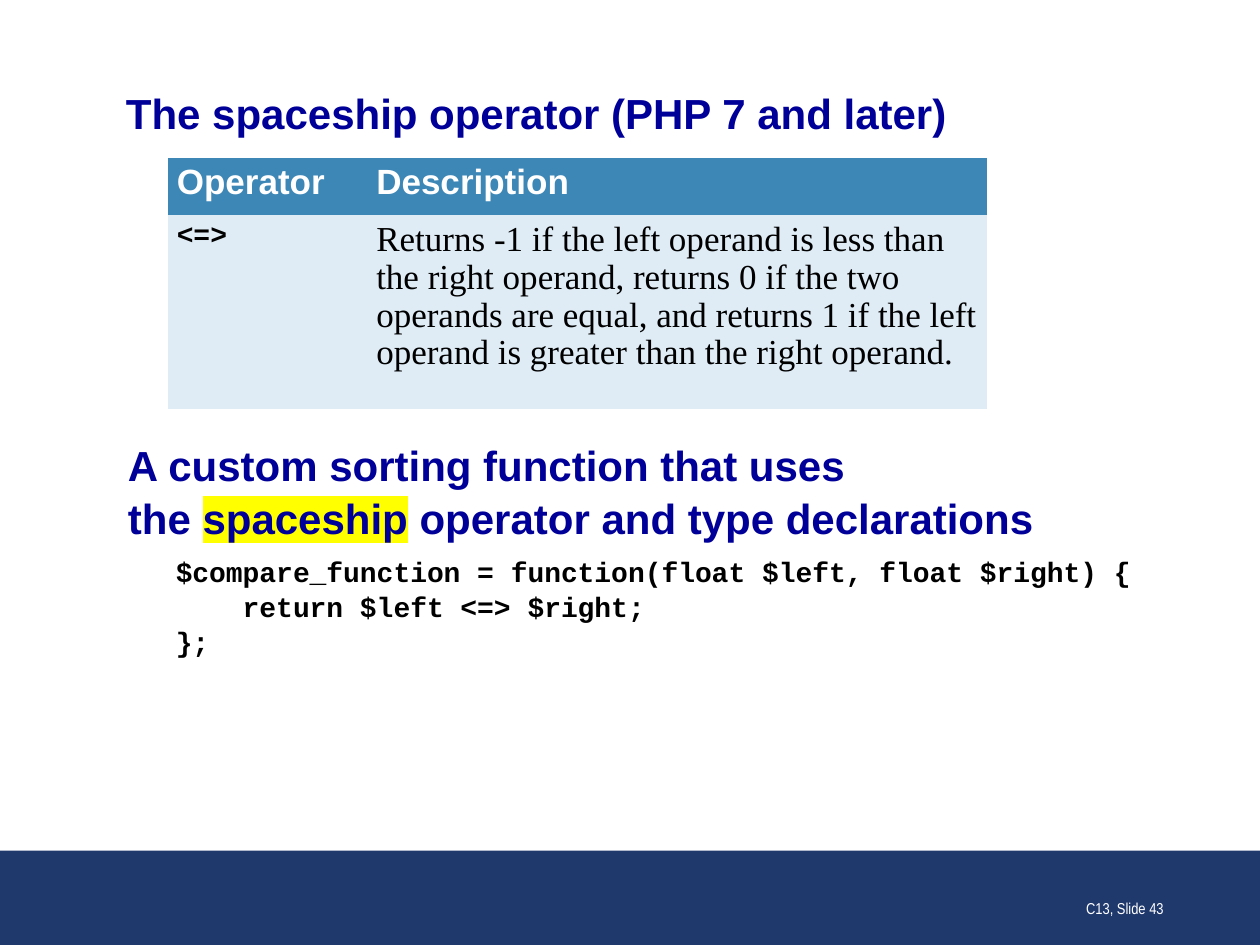
from lxml import etree
from pptx import Presentation
from pptx.dml.color import RGBColor
from pptx.enum.shapes import MSO_SHAPE as Shape
from pptx.enum.text import MSO_ANCHOR as Anchor, PP_ALIGN as Align
from pptx.oxml.ns import qn
from pptx.util import Inches, Pt

COLORS = {
    "band": "20396D", "heading": "000099", "text": "000000", "light": "FFFFFF",
    "table_head": "3D87B7", "table_body": "DFECF5", "marker": "FFFF00",
}
CELL = Inches(10) // 120  # the page is a grid of 120 columns and 90 rows
NO_TABLE_STYLE = "{2D5ABB26-0587-4C30-8999-92F81FD0307C}"
HEADING = ("Arial", 24, "heading", True)
TABLE_HEAD = ("Arial", 20, "light", True)
CODE = ("Courier New", 16, "text", True)
PROSE = ("Times New Roman", 20, "text", False)
FOOTER = ("Arial Narrow", 9, "light", False)


def grid(*cells):
    return [round(cell * CELL) for cell in cells]


def color(name):
    return RGBColor.from_string(COLORS[name])


def format_runs(para, style):
    name, size, tone, bold = style
    for span in para.runs:
        span.font.name, span.font.size, span.font.bold = name, Pt(size), bold
        span.font.color.rgb = color(tone)


def highlight(span, name):
    marker = etree.Element(qn("a:highlight"))
    etree.SubElement(marker, qn("a:srgbClr"), val=COLORS[name])
    span.font.fill.solid()
    span.font.color.rgb = color("heading")
    span._r.rPr.find(qn("a:solidFill")).addnext(marker)


def add_text_frame(page, box, anchor=Anchor.TOP):
    frame = page.shapes.add_textbox(*grid(*box)).text_frame
    frame.word_wrap = True
    frame.vertical_anchor = anchor
    return frame


def add_band(page, box):
    band = page.shapes.add_shape(Shape.RECTANGLE, *grid(*box))
    band.shadow.inherit = False
    band.fill.solid()
    band.fill.fore_color.rgb = color("band")
    band.line.fill.background()


def add_title(page, box, title):
    frame = add_text_frame(page, box, Anchor.MIDDLE)
    frame.margin_left = frame.margin_right = frame.margin_top = frame.margin_bottom = 0
    frame.text = title
    para = frame.paragraphs[0]
    para.line_spacing = 1.05
    format_runs(para, HEADING)


def add_operator_table(page, box, widths, heights, rows):
    table = page.shapes.add_table(len(rows), len(widths), *grid(*box)).table
    table._tbl.tblPr.find(qn("a:tableStyleId")).text = NO_TABLE_STYLE
    for column, width in zip(table.columns, grid(*widths)):
        column.width = width
    for row, height, (fill, entries) in zip(table.rows, grid(*heights), rows):
        row.height = height
        for cell, (text, style) in zip(row.cells, entries):
            cell.fill.solid()
            cell.fill.fore_color.rgb = color(fill)
            cell.margin_left = cell.margin_right = Inches(0.07)
            cell.margin_top = cell.margin_bottom = Inches(0.05)
            cell.text = text
            para = cell.text_frame.paragraphs[0]
            para.line_spacing = 0.97
            format_runs(para, style)


def add_example(page, box, lines, marked, code):
    frame = add_text_frame(page, box)

    # Heading with one highlighted word
    para = frame.paragraphs[0]
    first, second = lines
    before, after = second.split(marked)
    para.add_run().text = first
    para.add_line_break()
    for text in (before, marked, after):
        para.add_run().text = text
    para.line_spacing, para.space_after = 1.05, Pt(6)
    format_runs(para, HEADING)
    highlight(para.runs[2], "marker")

    # Indented code
    for line in code:
        para = frame.add_paragraph()
        para.text = line
        properties = para._p.get_or_add_pPr()
        properties.set("marL", str(Inches(0.38)))
        properties.set("indent", "0")
        para.line_spacing = 1.05
        format_runs(para, CODE)


def add_footer(page, box, text):
    frame = add_text_frame(page, box, Anchor.BOTTOM)
    frame.text = text
    para = frame.paragraphs[0]
    para.alignment = Align.RIGHT
    format_runs(para, FOOTER)


def main():
    deck = Presentation()
    deck.slide_width, deck.slide_height = grid(120, 90)
    page = deck.slides.add_slide(deck.slide_layouts[6])

    add_band(page, (0, 81, 120, 9))
    add_title(page, (12, 8.2, 96, 4.8), "The spaceship operator (PHP 7 and later)")
    description = (
        "Returns -1 if the left operand is less than the right operand, "
        "returns 0 if the two operands are equal, and returns 1 if the left "
        "operand is greater than the right operand."
    )
    add_operator_table(page, (16, 15, 78, 24), (19, 59), (5.5, 18.5), [
        ("table_head", [("Operator", TABLE_HEAD), ("Description", TABLE_HEAD)]),
        ("table_body", [("<=>", CODE), (description, PROSE)]),
    ])
    add_example(
        page, (11, 41, 99, 29),
        ("A custom sorting function that uses",
         "the spaceship operator and type declarations"),
        "spaceship",
        ("$compare_function = function(float $left, float $right) {",
         "    return $left <=> $right;",
         "};"),
    )
    add_footer(page, (87, 82, 25, 6), "C13, Slide 43")
    deck.save("out.pptx")


if __name__ == "__main__":
    main()
